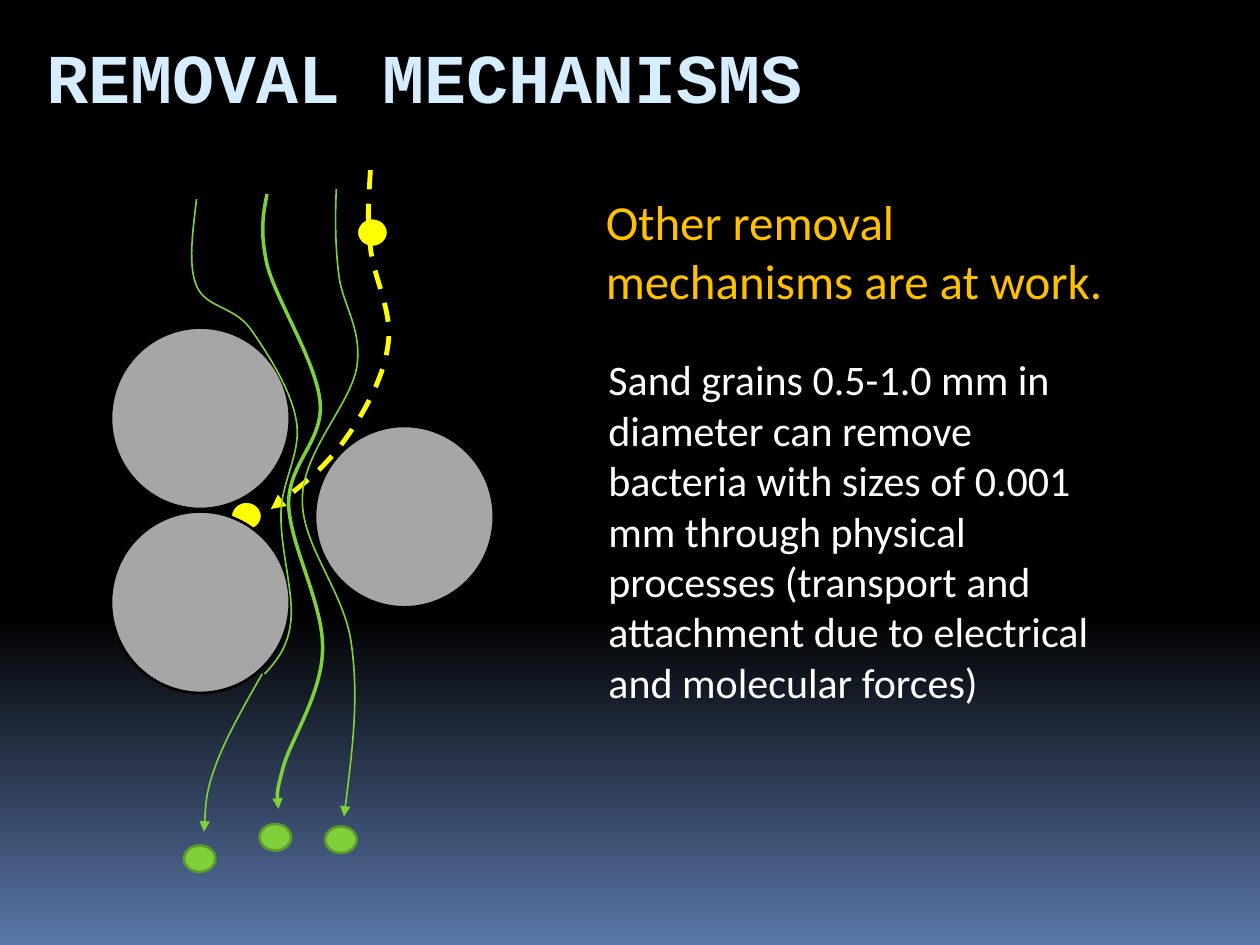
from typing import NamedTuple

from pptx import Presentation
from pptx.dml.color import RGBColor
from pptx.enum.dml import MSO_LINE
from pptx.enum.shapes import MSO_SHAPE
from pptx.oxml.ns import qn
from pptx.oxml.xmlchemy import OxmlElement
from pptx.util import Pt

HUES = {
    "black": "000000",
    "dusk": "5A77A9",
    "ice": "D6ECFF",
    "amber": "FFC000",
    "white": "FFFFFF",
    "yellow": "FFFF00",
    "grey": "A6A6A6",
    "green": "7FD13B",
    "moss": "5E9B2C",
}


class Label(NamedTuple):
    text: str
    box: tuple[float, float, float, float]
    size: float
    hue: str
    font: str = "Calibri"
    bold: bool = False


class Kind(NamedTuple):
    """Size and colours shared by all balls of one kind."""
    wide: float
    high: float
    fill: str
    edge: str


class Ball(NamedTuple):
    kind: Kind
    left: float
    top: float


class Flow(NamedTuple):
    """A start point, then three points for each Bezier segment."""
    points: list[tuple[float, float]]
    hue: str = "green"
    width: float = 0.94
    arrow: bool = True
    dashed: bool = False


GRAIN = Kind(102.2, 103.7, "grey", "black")
GERM = Kind(18, 16.6, "yellow", "black")
DROP = Kind(18, 15.1, "green", "moss")

LABELS = [
    Label("REMOVAL MECHANISMS", (19.4, 15.8, 662.4, 55.4), 40, "ice",
          "Courier New", True),
    Label("Other removal mechanisms are at work.",
          (339.1, 105.8, 312.5, 74.9), 28, "amber"),
    Label("Sand grains 0.5-1.0 mm in diameter can remove bacteria with sizes "
          "of 0.001 mm through physical processes (transport and attachment "
          "due to electrical and molecular forces)",
          (340.6, 198.7, 300.2, 211), 24, "white"),
]

# The first germ lies behind the grains.
BALLS = [
    Ball(GERM, 131.8, 286.6),
    Ball(GERM, 203.8, 124.6),
    Ball(GRAIN, 63.4, 187.2),
    Ball(GRAIN, 180, 243.4),
    Ball(GRAIN, 63.4, 292.3),
]
DROPS = [
    Ball(DROP, 105.1, 483.1),
    Ball(DROP, 148.3, 470.9),
    Ball(DROP, 185.8, 472.3),
]

FLOWS = [
    Flow([(152.6, 110.9),
          (150.5, 121.7), (148.3, 131.8), (152.6, 151.2),
          (157.7, 171.4), (180.7, 206.6), (182.9, 229.7),
          (185, 252), (164.9, 264.2), (164.9, 288),
          (165.6, 311.8), (185, 345.6), (184.3, 370.8),
          (184.3, 395.3), (166.3, 422.6), (162, 437.8),
          (157.7, 453.6), (158.4, 457.9), (159.1, 462.2)], width=2),
    Flow([(211.7, 97.2),
          (211, 110.9), (209.5, 124.6), (211.7, 141.1),
          (213.1, 157.7), (224.6, 177.8), (221.8, 196.6),
          (219.6, 215.3), (208.1, 236.2), (196.6, 252),
          (185, 267.8), (169.9, 279.4), (154.8, 290.9)],
         "yellow", 2.75, dashed=True),
    Flow([(192.2, 108),
          (191.5, 124.6), (191.5, 140.4), (193.7, 157.7),
          (195.8, 174.2), (207.4, 188.6), (203.8, 210.2),
          (200.2, 231.1), (172.8, 258.5), (172.8, 285.1),
          (172.1, 311.8), (197.3, 338.4), (200.9, 368.6),
          (205.2, 399.6), (200.9, 432.7), (196.6, 466.6)]),
    Flow([(149.8, 385.2),
          (139, 403.9), (128.2, 423.4), (123.1, 437.8),
          (117.4, 452.9), (117.4, 464.4), (116.6, 475.2)]),
    Flow([(112.3, 113.8),
          (110.2, 132.5), (107.3, 151.2), (112.3, 163.4),
          (117.4, 175.7), (133.2, 175), (142.6, 187.2),
          (151.9, 200.2), (166.3, 222.5), (169.2, 239.8),
          (172.8, 257.8), (161.3, 273.6), (160.6, 292.3),
          (159.8, 311.8), (167.8, 338.4), (166.3, 354.2),
          (164.9, 369.4), (158.4, 377.3), (151.2, 385.2)], arrow=False),
]


def tint(hue: str) -> RGBColor:
    return RGBColor.from_string(HUES[hue])


def paint_back(slide) -> None:
    fill = slide.background.fill
    fill.gradient()
    fill.gradient_angle = 270
    for stop, hue, place in zip(fill.gradient_stops, ("black", "dusk"), (0.65, 1)):
        stop.color.rgb = tint(hue)
        stop.position = place


def add_label(slide, label: Label) -> None:
    frame = slide.shapes.add_textbox(*map(Pt, label.box)).text_frame
    frame.word_wrap = True
    run = frame.paragraphs[0].add_run()
    run.text = label.text
    run.font.name = label.font
    run.font.size = Pt(label.size)
    run.font.bold = label.bold
    run.font.color.rgb = tint(label.hue)


def add_ball(slide, ball: Ball) -> None:
    kind = ball.kind
    shape = slide.shapes.add_shape(
        MSO_SHAPE.OVAL, Pt(ball.left), Pt(ball.top), Pt(kind.wide), Pt(kind.high))
    shape.shadow.inherit = False
    shape.fill.solid()
    shape.fill.fore_color.rgb = tint(kind.fill)
    shape.line.color.rgb = tint(kind.edge)
    shape.line.width = Pt(1.5)


def bend(shape) -> None:
    """Turn each three straight steps of a freeform into one Bezier segment."""
    steps = list(shape._element.iter(qn("a:lnTo")))
    for i in range(0, len(steps), 3):
        curve = OxmlElement("a:cubicBezTo")
        steps[i].addprevious(curve)
        for step in steps[i:i + 3]:
            curve.append(step[0])
            step.getparent().remove(step)


def add_flow(slide, flow: Flow) -> None:
    start, *rest = [(Pt(x), Pt(y)) for x, y in flow.points]
    pen = slide.shapes.build_freeform(*start)
    pen.add_line_segments(rest, close=False)
    shape = pen.convert_to_shape()
    bend(shape)
    shape.shadow.inherit = False
    shape.fill.background()
    line = shape.line
    line.color.rgb = tint(flow.hue)
    line.width = Pt(flow.width)
    if flow.dashed:
        line.dash_style = MSO_LINE.DASH
    if flow.arrow:
        tip = OxmlElement("a:tailEnd")
        tip.set("type", "triangle")
        line._get_or_add_ln().append(tip)


def main() -> None:
    deck = Presentation()
    deck.slide_width, deck.slide_height = Pt(720), Pt(540)
    slide = deck.slides.add_slide(deck.slide_layouts[6])
    paint_back(slide)
    for label in LABELS:
        add_label(slide, label)
    for ball in BALLS:
        add_ball(slide, ball)
    for flow in FLOWS:
        add_flow(slide, flow)
    for drop in DROPS:
        add_ball(slide, drop)
    deck.save("out.pptx")


if __name__ == "__main__":
    main()
